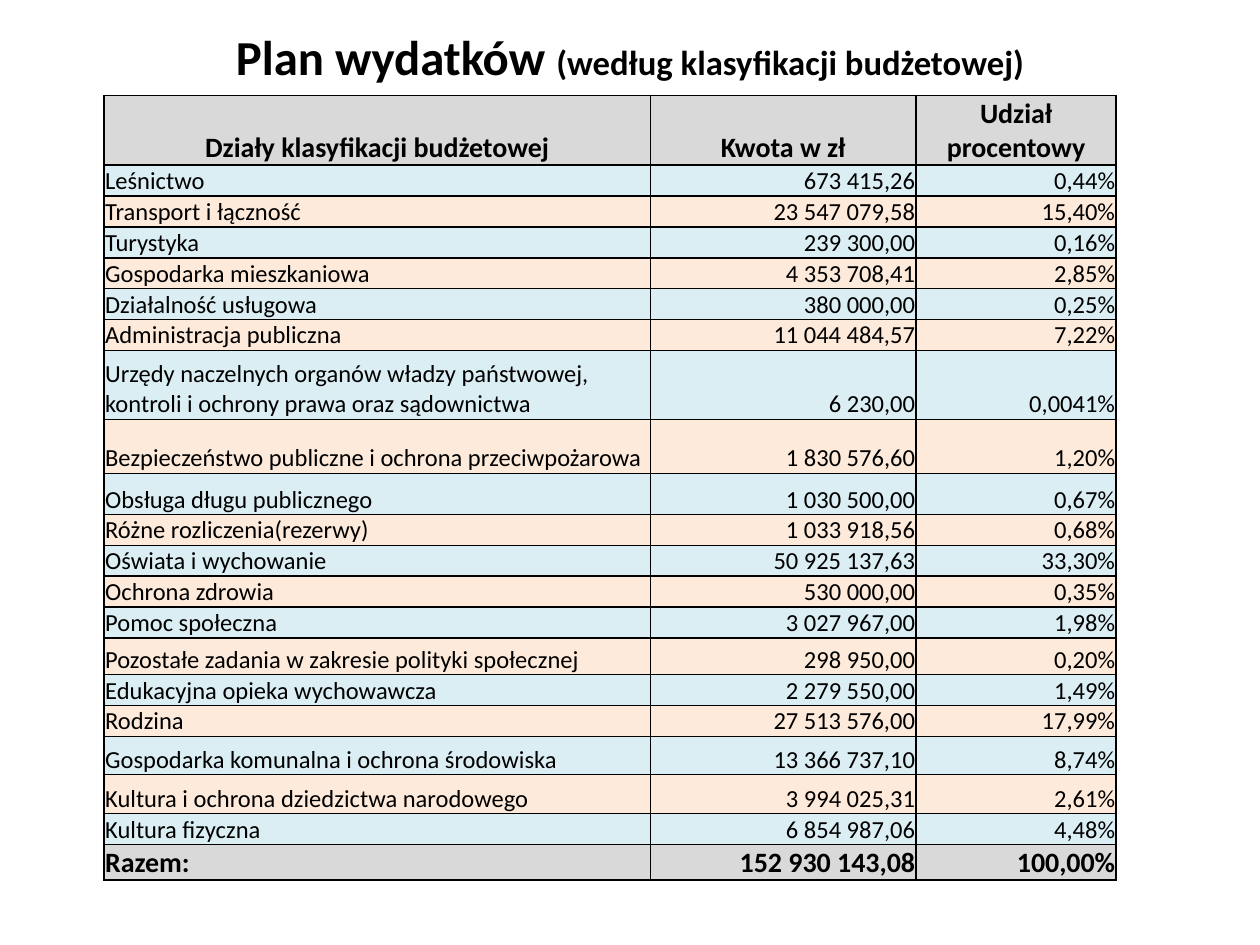
from lxml.etree import SubElement
from pptx import Presentation
from pptx.dml.color import RGBColor
from pptx.enum.text import MSO_ANCHOR as Anchor, MSO_AUTO_SIZE as AutoSize, PP_ALIGN as Align
from pptx.oxml.ns import qn
from pptx.util import Cm, Pt

FONT = "Calibri"
COLORS = {"text": "000000", "border": "000000", "summary": "D9D9D9",
          "odd": "DBEEF4", "even": "FDEADA"}

COLUMN_WIDTHS = [11.01, 5.36, 4.03]
LOW = 0.62
HEADER = ("Działy klasyfikacji budżetowej", "Kwota w zł", "Udział procentowy", 1.39)
EXPENSES = [
    ("Leśnictwo", "673 415,26", "0,44%", LOW),
    ("Transport i łączność", "23 547 079,58", "15,40%", LOW),
    ("Turystyka", "239 300,00", "0,16%", LOW),
    ("Gospodarka mieszkaniowa", "4 353 708,41", "2,85%", LOW),
    ("Działalność usługowa", "380 000,00", "0,25%", LOW),
    ("Administracja publiczna", "11 044 484,57", "7,22%", LOW),
    ("Urzędy naczelnych organów władzy państwowej, kontroli i ochrony prawa oraz sądownictwa",
     "6 230,00", "0,0041%", 1.39),
    ("Bezpieczeństwo publiczne i ochrona przeciwpożarowa", "1 830 576,60", "1,20%", 1.09),
    ("Obsługa długu publicznego", "1 030 500,00", "0,67%", 0.83),
    ("Różne rozliczenia(rezerwy)", "1 033 918,56", "0,68%", LOW),
    ("Oświata i wychowanie", "50 925 137,63", "33,30%", LOW),
    ("Ochrona zdrowia", "530 000,00", "0,35%", LOW),
    ("Pomoc społeczna", "3 027 967,00", "1,98%", LOW),
    ("Pozostałe zadania w zakresie polityki społecznej", "298 950,00", "0,20%", 0.74),
    ("Edukacyjna opieka wychowawcza", "2 279 550,00", "1,49%", LOW),
    ("Rodzina", "27 513 576,00", "17,99%", LOW),
    ("Gospodarka komunalna i ochrona środowiska", "13 366 737,10", "8,74%", 0.77),
    ("Kultura i ochrona dziedzictwa narodowego", "3 994 025,31", "2,61%", 0.79),
    ("Kultura fizyczna", "6 854 987,06", "4,48%", LOW),
]
TOTAL = ("Razem:", "152 930 143,08", "100,00%", 0.7)


def format_span(span, size, bold):
    span.font.name = FONT
    span.font.size = Pt(size)
    span.font.bold = bold
    span.font.color.rgb = RGBColor.from_string(COLORS["text"])


def add_borders(cell):
    properties = cell._tc.get_or_add_tcPr()
    for side in ("a:lnL", "a:lnR", "a:lnT", "a:lnB"):
        line = SubElement(properties, qn(side), w=str(Pt(1)))
        fill = SubElement(line, qn("a:solidFill"))
        SubElement(fill, qn("a:srgbClr"), val=COLORS["border"])


def fill_cell(cell, text, align, size, bold, color):
    cell.margin_left = cell.margin_right = cell.margin_top = Cm(0.02)
    cell.margin_bottom = 0
    cell.vertical_anchor = Anchor.BOTTOM
    add_borders(cell)
    cell.fill.solid()
    cell.fill.fore_color.rgb = RGBColor.from_string(color)
    para = cell.text_frame.paragraphs[0]
    para.text = text
    para.alignment = align
    format_span(para.runs[0], size, bold)


def place_title(slide, left, top, width, height):
    title = slide.shapes.title
    title.left, title.top, title.width, title.height = left, top, width, height
    frame = title.text_frame
    frame.auto_size = AutoSize.NONE
    frame.word_wrap = True
    frame.vertical_anchor = Anchor.MIDDLE
    para = frame.paragraphs[0]
    para.alignment = Align.CENTER
    for text, size in (("Plan wydatków ", 27.9), ("(według klasyfikacji budżetowej)", 19.8)):
        span = para.add_run()
        span.text = text
        format_span(span, size, True)


def add_expense_table(slide, left, top):
    records = [HEADER, *EXPENSES, TOTAL]
    width = Cm(sum(COLUMN_WIDTHS))
    height = Cm(sum(record[-1] for record in records))
    table = slide.shapes.add_table(len(records), len(COLUMN_WIDTHS),
                                   left, top, width, height).table
    for column, column_width in zip(table.columns, COLUMN_WIDTHS):
        column.width = Cm(column_width)
    for index, (*texts, row_height) in enumerate(records):
        table.rows[index].height = Cm(row_height)
        summary = index in (0, len(records) - 1)
        color = COLORS["summary" if summary else "odd" if index % 2 else "even"]
        aligns = [Align.CENTER] * 3 if index == 0 else [Align.LEFT, Align.RIGHT, Align.RIGHT]
        for cell, text, align in zip(table.rows[index].cells, texts, aligns):
            fill_cell(cell, text, align, 16 if summary else 14, summary, color)


def main():
    deck = Presentation()
    deck.slide_width, deck.slide_height = Cm(25.4), Cm(19.05)
    slide = deck.slides.add_slide(deck.slide_layouts[5])
    place_title(slide, Cm(1.27), Cm(0.53), Cm(22.86), Cm(1.19))
    add_expense_table(slide, Cm(2.1), Cm(1.93))
    deck.save("out.pptx")


if __name__ == "__main__":
    main()
